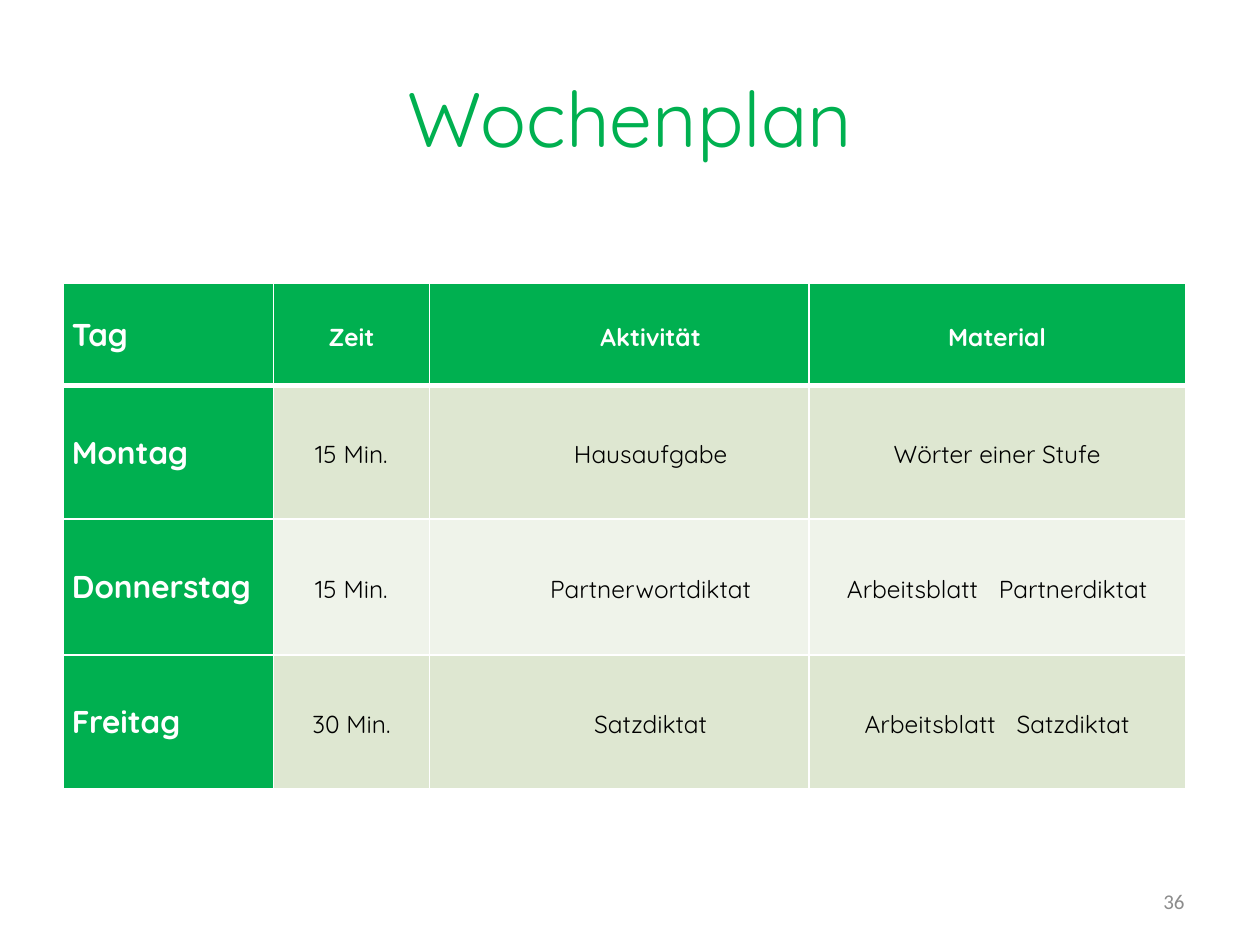
from lxml.etree import SubElement
from pptx import Presentation
from pptx.dml.color import RGBColor
from pptx.enum.text import MSO_ANCHOR, PP_ALIGN
from pptx.oxml.ns import qn
from pptx.util import Inches, Pt

WIDE, HIGH = Inches(10), Inches(7.5)
GREEN, WHITE, BLACK, GRAY = "00B050", "FFFFFF", "000000", "8C8C8C"
BANDS = ("DEE7D1", "EFF3EA")
COLS = (1.67, 1.24, 3.01, 2.99)
LINES = (0.81, 1.06, 1.08, 1.06)
GAP = "|"  # marks a wide gap between two words of a cell
PLAN = (
    ("Tag", "Zeit", "Aktivität", "Material"),
    ("Montag", "15 Min.", "Hausaufgabe", "Wörter einer Stufe"),
    ("Donnerstag", "15 Min.", "Partnerwortdiktat", "Arbeitsblatt|Partnerdiktat"),
    ("Freitag", "30 Min.", "Satzdiktat", "Arbeitsblatt|Satzdiktat"),
)
HEAD = {"name": "Quicksand", "size": Pt(18), "bold": True}
BODY = {"name": "Quicksand", "size": Pt(14), "bold": False}


def paint(color, code):
    color.rgb = RGBColor.from_string(code)


def style(item, form):
    for key, value in form.items():
        setattr(item, key, value)


def write(para, text, form, code):
    """Add the text as runs; each GAP becomes one widely spaced blank."""
    for index, part in enumerate(text.split(GAP)):
        for word in ([" "] if index else []) + [part]:
            run = para.add_run()
            run.text = word
            style(run.font, form)
            paint(run.font.color, code)
            if word == " ":
                run.font._element.set("spc", "800")


def edge(cell, base):
    """Draw white cell borders, with the given width at the bottom."""
    props = cell._tc.get_or_add_tcPr()
    for side in "LRTB":
        width = base if side == "B" else 1
        line = SubElement(props, qn(f"a:ln{side}"), w=str(Pt(width)))
        fill = SubElement(line, qn("a:solidFill"))
        SubElement(fill, qn("a:srgbClr"), val=WHITE)


def fill_cell(cell, text, row, col):
    strong = row == 0 or col == 0
    edge(cell, 3 if row == 0 else 1)
    cell.fill.solid()
    paint(cell.fill.fore_color, GREEN if strong else BANDS[(row - 1) % 2])
    style(cell, {"vertical_anchor": MSO_ANCHOR.MIDDLE,
                 "margin_left": Inches(0.07), "margin_right": Inches(0.07),
                 "margin_top": 0, "margin_bottom": 0})
    para = cell.text_frame.paragraphs[0]
    if col:
        style(para, {"alignment": PP_ALIGN.CENTER, "line_spacing": 1.15})
    if col == 2:
        para._p.get_or_add_pPr().set("marL", str(Inches(0.5)))
    form = HEAD if col == 0 else BODY | {"bold": strong}
    write(para, text, form, WHITE if strong else BLACK)


def add_plan(slide):
    table = slide.shapes.add_table(
        len(LINES), len(COLS), int(WIDE * 0.05), int(HIGH * 0.3),
        Inches(sum(COLS)), Inches(sum(LINES))).table
    for col, width in zip(table.columns, COLS):
        col.width = Inches(width)
    for row, height in zip(table.rows, LINES):
        row.height = Inches(height)
    for row, texts in enumerate(PLAN):
        for col, text in enumerate(texts):
            fill_cell(table.cell(row, col), text, row, col)


def add_title(slide, text):
    title = slide.shapes.title
    style(title, {"left": int(WIDE * 0.05), "top": int(HIGH * 0.04),
                  "width": int(WIDE * 0.9), "height": Inches(1.25)})
    title.text_frame.vertical_anchor = MSO_ANCHOR.MIDDLE
    para = title.text_frame.paragraphs[0]
    para.alignment = PP_ALIGN.CENTER
    write(para, text, {"name": "Quicksand", "size": Pt(44)}, GREEN)


def add_number(slide, text):
    box = slide.shapes.add_textbox(
        Inches(7.17), Inches(6.95), Inches(2.33), Inches(0.4))
    style(box.text_frame, {"word_wrap": True,
                           "vertical_anchor": MSO_ANCHOR.MIDDLE})
    para = box.text_frame.paragraphs[0]
    para.alignment = PP_ALIGN.RIGHT
    write(para, text, {"name": "Calibri", "size": Pt(12)}, GRAY)


def main():
    deck = Presentation()
    style(deck, {"slide_width": WIDE, "slide_height": HIGH})
    slide = deck.slides.add_slide(deck.slide_layouts.get_by_name("Title Only"))
    add_plan(slide)
    add_number(slide, "36")
    add_title(slide, "Wochenplan")
    deck.save("out.pptx")


if __name__ == "__main__":
    main()
